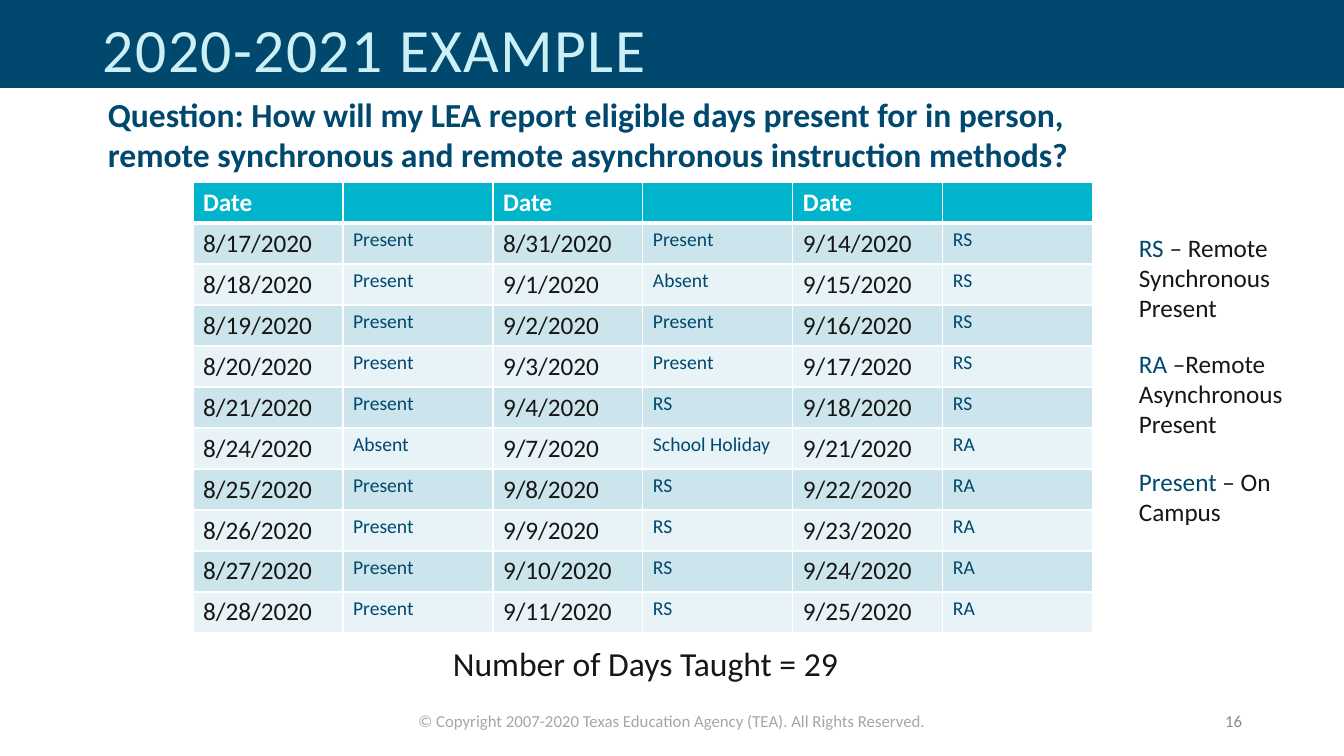
from lxml.etree import SubElement
from pptx import Presentation
from pptx.dml.color import RGBColor
from pptx.enum.shapes import MSO_SHAPE
from pptx.enum.text import MSO_ANCHOR, PP_ALIGN
from pptx.oxml.ns import qn
from pptx.util import Emu, Pt

COLORS = {
    "navy": "00486E", "pale": "CCF0F5", "teal": "00B5CB", "white": "FFFFFF",
    "ink": "171616", "band": "CCE5EC", "light": "E7F3F6",
    "footer": "A6A6A6", "number": "8C8C8C",
}

HEADER = ["Date", "", "Date", "", "Date", ""]
DAYS = [
    ["8/17/2020", "Present", "8/31/2020", "Present", "9/14/2020", "RS"],
    ["8/18/2020", "Present", "9/1/2020", "Absent", "9/15/2020", "RS"],
    ["8/19/2020", "Present", "9/2/2020", "Present", "9/16/2020", "RS"],
    ["8/20/2020", "Present", "9/3/2020", "Present", "9/17/2020", "RS"],
    ["8/21/2020", "Present", "9/4/2020", "RS", "9/18/2020", "RS"],
    ["8/24/2020", "Absent", "9/7/2020", "School Holiday", "9/21/2020", "RA"],
    ["8/25/2020", "Present", "9/8/2020", "RS", "9/22/2020", "RA"],
    ["8/26/2020", "Present", "9/9/2020", "RS", "9/23/2020", "RA"],
    ["8/27/2020", "Present", "9/10/2020", "RS", "9/24/2020", "RA"],
    ["8/28/2020", "Present", "9/11/2020", "RS", "9/25/2020", "RA"],
]
LEGEND = [
    (227, 181, 102, "RS ", ["– Remote Synchronous", "Present"]),
    (343, 165, 102, "RA ", ["–Remote Asynchronous", "Present"]),
    (461, 191, 72, "Present ", ["– On Campus"]),
]


def px(n):
    return Emu(round(n * 914400 / 100.8))


def rgb(name):
    return RGBColor.from_string(COLORS[name])


class Deck:
    """Holds the font and the current slide, and draws each kind of element."""

    def __init__(self, prs, font):
        self.font = font
        self.s = prs.slides.add_slide(prs.slide_layouts[6])

    def style(self, p, size, color, bold=False):
        p.font.name = self.font
        p.font.size = Pt(size)
        p.font.bold = bold
        p.font.color.rgb = rgb(color)

    def rect(self, x, y, w, h, color):
        sp = self.s.shapes.add_shape(MSO_SHAPE.RECTANGLE, px(x), px(y), px(w), px(h))
        sp.shadow.inherit = False
        sp.fill.solid()
        sp.fill.fore_color.rgb = rgb(color)
        sp.line.fill.background()

    def text(self, x, y, w, h, lines, size, color, bold=False,
             align=PP_ALIGN.LEFT, anchor=MSO_ANCHOR.TOP):
        tf = self.s.shapes.add_textbox(px(x), px(y), px(w), px(h)).text_frame
        tf.word_wrap = True
        tf.vertical_anchor = anchor
        tf.text = "\n".join(lines)
        for p in tf.paragraphs:
            p.alignment = align
            self.style(p, size, color, bold)
        return tf

    def title(self, x, y, w, h, text):
        tf = self.text(x, y, w, h, [text], 44, "pale", anchor=MSO_ANCHOR.MIDDLE)
        p = tf.paragraphs[0]
        p.line_spacing = 0.9
        p.runs[0]._r.get_or_add_rPr().set("spc", "100")

    def legend(self, x, y, w, h, term, lines):
        tf = self.text(x, y, w, h, [term] + lines[1:], 18, "ink")
        p = tf.paragraphs[0]
        p.runs[0].font.color.rgb = rgb("navy")
        r = p.add_run()
        r.text = lines[0]

    def borders(self, cell, top, bottom):
        tcPr = cell._tc.get_or_add_tcPr()
        for side, width in (("L", 1), ("R", 1), ("T", top), ("B", bottom)):
            ln = SubElement(tcPr, qn(f"a:ln{side}"), w=str(Pt(width)))
            fill = SubElement(ln, qn("a:solidFill"))
            SubElement(fill, qn("a:srgbClr"), val=COLORS["white"])

    def cell(self, cell, text, row, col):
        self.borders(cell, 3 if row == 1 else 1, 3 if row == 0 else 1)
        cell.fill.solid()
        cell.text = text
        p = cell.text_frame.paragraphs[0]
        if row == 0:
            fill = "teal"
            self.style(p, 18, "white", True)
        else:
            fill = "band" if row % 2 else "light"
            self.style(p, *((14, "navy") if col % 2 else (18, "ink")))
        cell.fill.fore_color.rgb = rgb(fill)

    def table(self, x, y, col_w, row_h, rows):
        n_rows, n_cols = len(rows), len(rows[0])
        table = self.s.shapes.add_table(n_rows, n_cols, px(x), px(y), px(col_w * n_cols),
                                        px(row_h * n_rows)).table
        table.horz_banding = False
        for column in table.columns:
            column.width = px(col_w)
        for i, values in enumerate(rows):
            table.rows[i].height = px(row_h)
            for j, value in enumerate(values):
                self.cell(table.cell(i, j), value, i, j)


def main():
    prs = Presentation()
    prs.slide_width, prs.slide_height = px(1344), px(756)
    deck = Deck(prs, "Calibri")
    deck.rect(0, 0, 1344, 88, "navy")
    deck.text(408, 706, 528, 30,
              ["© Copyright 2007-2020 Texas Education Agency (TEA). All Rights Reserved."],
              12, "footer", align=PP_ALIGN.CENTER)
    deck.text(950, 701, 302, 40, ["16"], 12, "number",
              align=PP_ALIGN.RIGHT, anchor=MSO_ANCHOR.MIDDLE)
    deck.title(93, 9, 1076, 88, "2020-2021 EXAMPLE")
    deck.text(98, 89, 1078, 92,
              ["Question: How will my LEA report eligible days present for in person, "
               "remote synchronous and remote asynchronous instruction methods?"],
              24, "navy", bold=True)
    deck.table(193, 182, 150, 41, [HEADER] + DAYS)
    deck.text(443, 638, 432, 50, ["Number of Days Taught = 29"], 24, "ink")
    for y, w, h, term, lines in LEGEND:
        deck.legend(1129, y, w, h, term, lines)
    prs.save("out.pptx")


if __name__ == "__main__":
    main()
